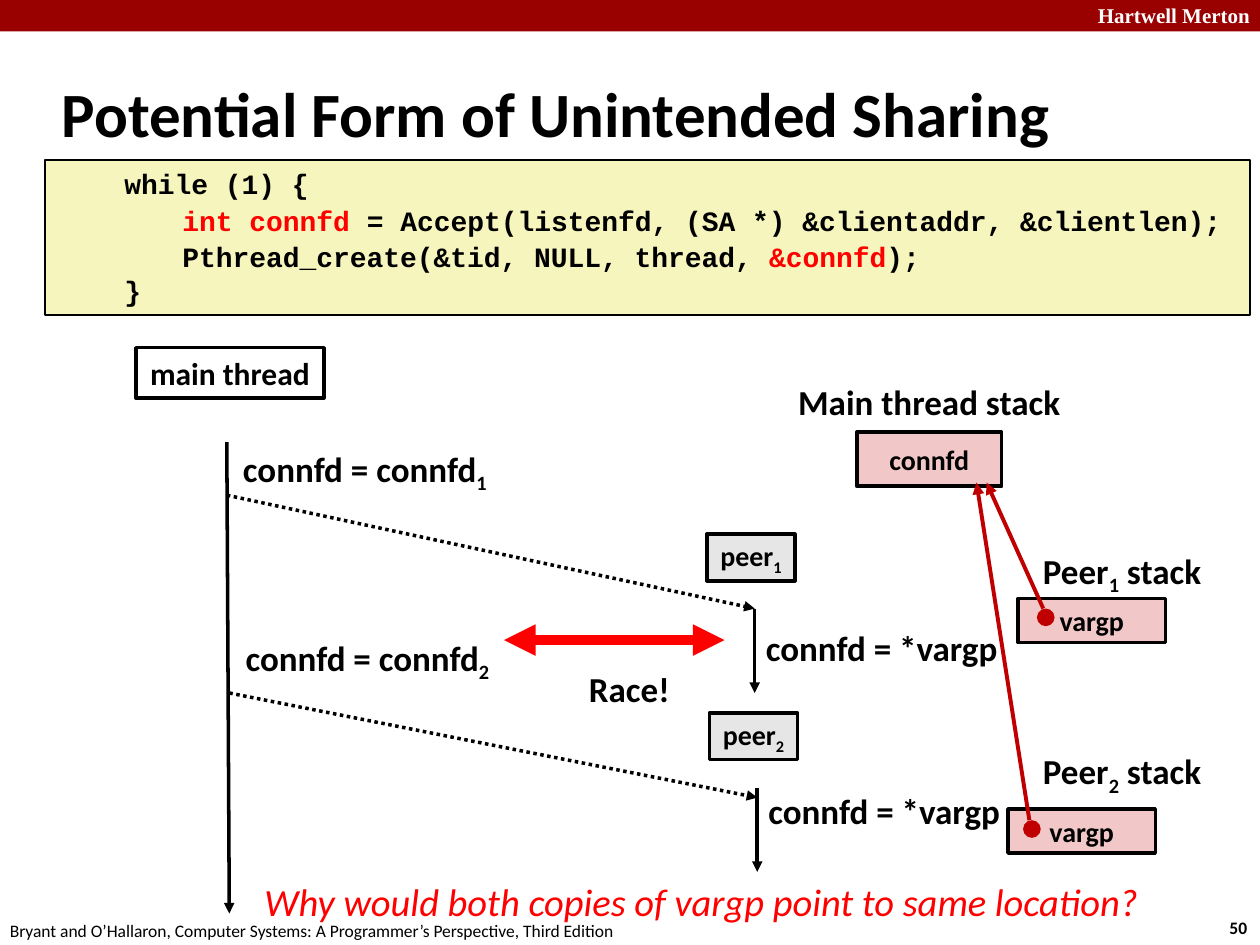
from lxml import etree
from pptx import Presentation
from pptx.dml.color import RGBColor
from pptx.enum.dml import MSO_LINE
from pptx.enum.shapes import MSO_CONNECTOR, MSO_SHAPE
from pptx.enum.text import MSO_ANCHOR, PP_ALIGN
from pptx.oxml.ns import qn
from pptx.util import Inches, Pt

RECT, OVAL = MSO_SHAPE.RECTANGLE, MSO_SHAPE.OVAL
LINE, DOTS = MSO_CONNECTOR.STRAIGHT, MSO_LINE.ROUND_DOT
LEFT, MID, RIGHT = PP_ALIGN.LEFT, PP_ALIGN.CENTER, PP_ALIGN.RIGHT
TOP, CORE = MSO_ANCHOR.TOP, MSO_ANCHOR.MIDDLE
BLACK, WHITE, RED = "000000", "FFFFFF", "FF0000"
MAROON, DARK, PINK = "990000", "C00000", "F1C7C7"
GRAY, CREAM = "E6E6E6", "F6F5BD"
CODE = [
    (0.53, 1, "while (1) {"),
    (0.99, 1.1, "|int connfd| = Accept(listenfd, (SA *) &clientaddr, &clientlen);"),
    (0.99, 1.1, "Pthread_create(&tid, NULL, thread, |&connfd|);"),
    (0.53, 1, "}"),
]


def grid(*cells):
    """Turn counts of tenth-inch cells into lengths."""
    return [Inches(round(c / 10, 2)) for c in cells]


def hue(code):
    """Turn a hex string into a colour."""
    return RGBColor.from_string(code)


def write(para, text, size, color=BLACK, font="Calibri", bold=True, mark=None):
    """Fill a paragraph; parts between bars are marked red or lowered."""
    for i, part in enumerate(text.split("|")):
        if not part:
            continue
        run = para.add_run()
        run.text = part
        face = run.font
        face.size, face.name, face.bold = Pt(size), font, bold
        face.color.rgb = hue(mark if mark and i % 2 else color)
        if i % 2 and not mark:
            run._r.get_or_add_rPr().set("baseline", "-25000")


def label(slide, box, text, size=20, align=LEFT, **look):
    """Add a text box on one line."""
    frame = slide.shapes.add_textbox(*grid(*box)).text_frame
    frame.word_wrap = False
    para = frame.paragraphs[0]
    para.alignment = align
    write(para, text, size, **look)
    return para


def block(slide, box, fill=None, text="", size=16, edge=2, kind=RECT):
    """Add a filled or open shape with a centred caption."""
    shape = slide.shapes.add_shape(kind, *grid(*box))
    shape.shadow.inherit = False
    if fill:
        shape.fill.solid()
        shape.fill.fore_color.rgb = hue(fill)
    else:
        shape.fill.background()
    if edge:
        shape.line.color.rgb = hue(BLACK)
        shape.line.width = Pt(edge)
    else:
        shape.line.fill.background()
    if text:
        frame = shape.text_frame
        frame.word_wrap = False
        frame.vertical_anchor = CORE
        frame.paragraphs[0].alignment = MID
        write(frame.paragraphs[0], text, size)
    return shape


def arrow(slide, start, end, color=BLACK, width=2, dash=None, ends=("tailEnd",)):
    """Join two points with an arrow."""
    link = slide.shapes.add_connector(LINE, *grid(*start, *end))
    link.line.color.rgb = hue(color)
    link.line.width = Pt(width)
    if dash:
        link.line.dash_style = dash
    ln = link.line._get_or_add_ln()
    for name in ends:
        etree.SubElement(ln, qn("a:" + name)).set("type", "triangle")
    etree.SubElement(link._element.spPr, qn("a:effectLst"))


def frame_page(slide, wide, high):
    """Draw the top bar and the footer."""
    block(slide, (0, 0, wide, 2.5), MAROON, edge=0)
    label(slide, (wide - 14.8, -0.3, 15, 3), "Hartwell Merton", 12, RIGHT,
          color=WHITE, font="Times New Roman")
    label(slide, (wide - 3.4, high - 2.7, 3.7, 2.7), "50", 10)
    label(slide, (-0.2, high - 2.5, 50.8, 2.7),
          "Bryant and O’Hallaron, Computer Systems: A Programmer’s Perspective, Third Edition",
          10, bold=False)


def head(slide, box):
    """Place the title."""
    title = slide.shapes.title
    title.left, title.top, title.width, title.height = grid(*box)
    title.text_frame.vertical_anchor = CORE
    para = title.text_frame.paragraphs[0]
    para.alignment = LEFT
    write(para, "Potential Form of Unintended Sharing", 36)


def listing(slide, box):
    """Show the code panel."""
    frame = block(slide, box, CREAM, edge=1).text_frame
    frame.word_wrap = True
    frame.vertical_anchor = TOP
    for i, (indent, space, text) in enumerate(CODE):
        para = frame.add_paragraph() if i else frame.paragraphs[0]
        para.alignment, para.line_spacing = LEFT, space
        para._p.get_or_add_pPr().set("marL", str(Inches(indent)))
        write(para, text, 16, font="Courier New", mark=RED)


def thread(slide, box):
    """Draw the main thread and its time line."""
    x, y, w, h = box
    block(slide, (x, y, w, 4), text="main thread", size=18)
    arrow(slide, (x + 7.2, y + 7.5), (x + 7.4, y + h))


def peer(slide, box, num, fork, land, run, note):
    """Draw one spawn from the main thread to a peer; rows count from the box top."""
    x, y, w, h = box
    label(slide, (x + 0.3, y, 21.8, 4.4), f"connfd = connfd|{num}|")
    arrow(slide, (x, y + fork), (x + w, y + land), dash=DOTS)
    block(slide, (x + w - 3.8, y + run - 5.9, 7, 3.7), GRAY, f"peer|{num}|")
    arrow(slide, (x + w, y + run), (x + w, y + h))
    label(slide, (x + w - 0.1, y + note, 20.4, 4.4), "connfd = *vargp")


def race(slide, box):
    """Draw the two-way race arrow."""
    x, y, w, h = box
    arrow(slide, (x, y), (x + w, y), RED, 6, ends=("headEnd", "tailEnd"))
    label(slide, (x + 5.7, y + 1.7, 8.5, h - 1.7), "Race!", align=MID)


def stack(slide, box, num, name, dot, goal):
    """Draw a peer stack whose pointer leads to the goal."""
    x, y, w, h = box
    label(slide, (x + name[0], y + name[1], 14.9, 4.4), f"Peer|{num}| stack", align=MID)
    block(slide, box, PINK, "vargp")
    spot = x + dot[0], y + dot[1]
    arrow(slide, (spot[0] + 0.5, spot[1]), goal, DARK, 2.25)
    block(slide, (*spot, 1.4, 1.4), DARK, edge=0, kind=OVAL)


def main():
    """Build and save the slide."""
    deck = Presentation()
    wide, high = 100, 75
    deck.slide_width, deck.slide_height = grid(wide, high)
    slide = deck.slides.add_slide(deck.slide_layouts[5])
    frame_page(slide, wide, high)
    head(slide, (3.9, 4.8, 83, 8.3))
    listing(slide, (3.6, 12.7, 95.6, 12.3))
    thread(slide, (10.8, 27.6, 14.9, 44.9))
    peer(slide, (18, 35, 41.9, 20), 1, 4.3, 13.3, 13.3, 14.2)
    peer(slide, (18.2, 50, 41.9, 19.2), 2, 5, 13.3, 12.5, 12.2)
    race(slide, (40, 50.8, 17.5, 6.1))
    label(slide, (62.2, 29.7, 23.1, 4.4), "Main thread stack", align=MID)
    block(slide, (68, 34.3, 11.5, 4.3), PINK, "connfd")
    stack(slide, (80.8, 47.5, 11.7, 3.5), 1, (0.8, -4.4), (1.5, 0.8), (78.3, 38.3))
    stack(slide, (80, 64.2, 11.7, 3.5), 2, (1.6, -5.2), (1.2, 0.9), (77.5, 38.3))
    ask = label(slide, (20, 69.2, 74.9, 4.7),
                "Why would both copies of vargp point to same location?", 22,
                color=RED, bold=False)
    ask.runs[0].font.italic = True
    deck.save("out.pptx")


if __name__ == "__main__":
    main()
